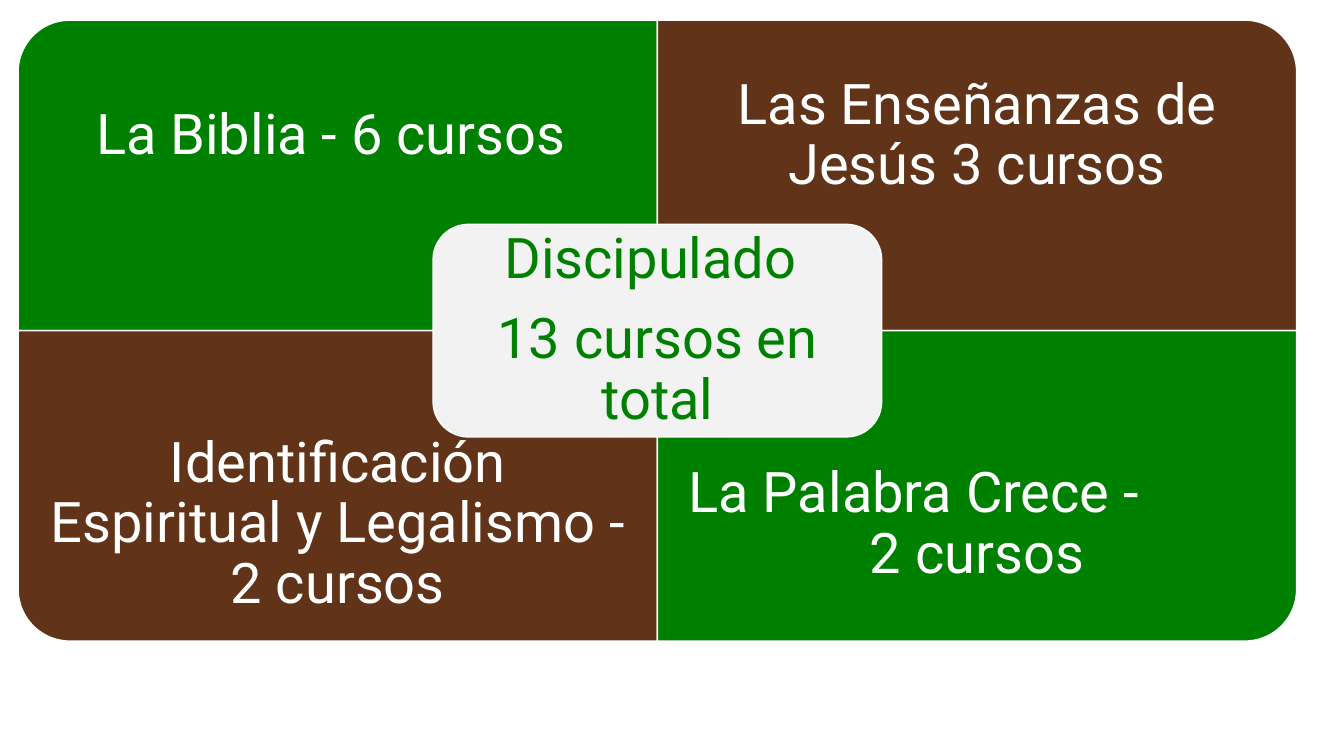
from dataclasses import dataclass

from pptx import Presentation
from pptx.dml.color import RGBColor
from pptx.enum.shapes import MSO_SHAPE
from pptx.enum.text import MSO_ANCHOR, PP_ALIGN
from pptx.util import Inches, Pt

ROUND_ONE = MSO_SHAPE.ROUND_1_RECTANGLE
ROUND_ALL = MSO_SHAPE.ROUNDED_RECTANGLE
MIDDLE = MSO_ANCHOR.MIDDLE
CENTER, LEFT = PP_ALIGN.CENTER, PP_ALIGN.LEFT


@dataclass(frozen=True)
class Theme:
    green: str = "008000"
    brown: str = "613318"
    light: str = "F2F2F2"
    white: str = "FFFFFF"
    font: str = "Roboto"
    size: int = 40
    gap: int = 14
    line: int = 1


THEME = Theme()

# The matrix: two columns by two rows, in inches
MATRIX_LEFT, MATRIX_TOP = 0.18, 0.2
COL, ROW = 6.34, 3.08
TEXT_SHARE = 0.75
HUB_W, HUB_H = 4.45, 2.11

# Column, row, turn of the rounded corner, fill, paragraphs, alignments
PANELS = [
    (0, 0, 270, THEME.green, ["La Biblia - 6 cursos "], [CENTER]),
    (1, 0, 0, THEME.brown, ["Las Enseñanzas de Jesús 3 cursos"], [CENTER]),
    (0, 1, 180, THEME.brown,
     ["Identificación Espiritual y Legalismo - 2 cursos"], [CENTER]),
    (1, 1, 90, THEME.green, ["La Palabra Crece -", "2 cursos"],
     [LEFT, CENTER]),
]


def add_block(slide, kind, center, size, fill, rotation=0):
    """Add a filled, white-edged shape placed by its centre."""
    (cx, cy), (w, h) = center, size
    sp = slide.shapes.add_shape(kind, Inches(cx - w / 2), Inches(cy - h / 2),
                                Inches(w), Inches(h))
    sp.rotation = rotation
    sp.shadow.inherit = False
    sp.fill.solid()
    sp.fill.fore_color.rgb = RGBColor.from_string(fill)
    sp.line.color.rgb = RGBColor.from_string(THEME.white)
    sp.line.width = Pt(THEME.line)
    return sp


def set_text(sp, lines, *, color, inset, aligns, gap=THEME.gap):
    tf = sp.text_frame
    tf.word_wrap = True
    tf.vertical_anchor = MIDDLE
    tf.margin_left = tf.margin_right = Inches(inset)
    tf.margin_top = tf.margin_bottom = Inches(inset)
    for i, (line, align) in enumerate(zip(lines, aligns)):
        p = tf.paragraphs[0] if i == 0 else tf.add_paragraph()
        p.alignment = align
        p.line_spacing = 0.9
        p.space_after = Pt(gap if i < len(lines) - 1 else THEME.gap)
        r = p.add_run()
        r.text = line
        r.font.name = THEME.font
        r.font.size = Pt(THEME.size)
        r.font.color.rgb = RGBColor.from_string(color)


def add_panel(slide, col, row, turn, fill, lines, aligns):
    """Add one quadrant, with its label kept to the outer part."""
    left, top = MATRIX_LEFT + col * COL, MATRIX_TOP + row * ROW
    size = (ROW, COL) if turn % 180 else (COL, ROW)
    add_block(slide, ROUND_ONE, (left + COL / 2, top + ROW / 2), size, fill,
              turn)
    label_top = top + row * ROW * (1 - TEXT_SHARE)
    label = slide.shapes.add_textbox(Inches(left), Inches(label_top),
                                     Inches(COL), Inches(ROW * TEXT_SHARE))
    set_text(label, lines, color=THEME.white, inset=0.31, aligns=aligns, gap=0)


def add_hub(slide, lines):
    center = MATRIX_LEFT + COL, MATRIX_TOP + ROW
    hub = add_block(slide, ROUND_ALL, center, (HUB_W, HUB_H), THEME.light)
    set_text(hub, lines, color=THEME.green, inset=0.17,
             aligns=[CENTER] * len(lines))


def main():
    prs = Presentation()
    prs.slide_width, prs.slide_height = Inches(13.33), Inches(7.5)
    slide = prs.slides.add_slide(prs.slide_layouts[6])
    for panel in PANELS:
        add_panel(slide, *panel)
    add_hub(slide, ["Discipulado ", "13 cursos en total"])
    prs.save("out.pptx")


if __name__ == "__main__":
    main()
